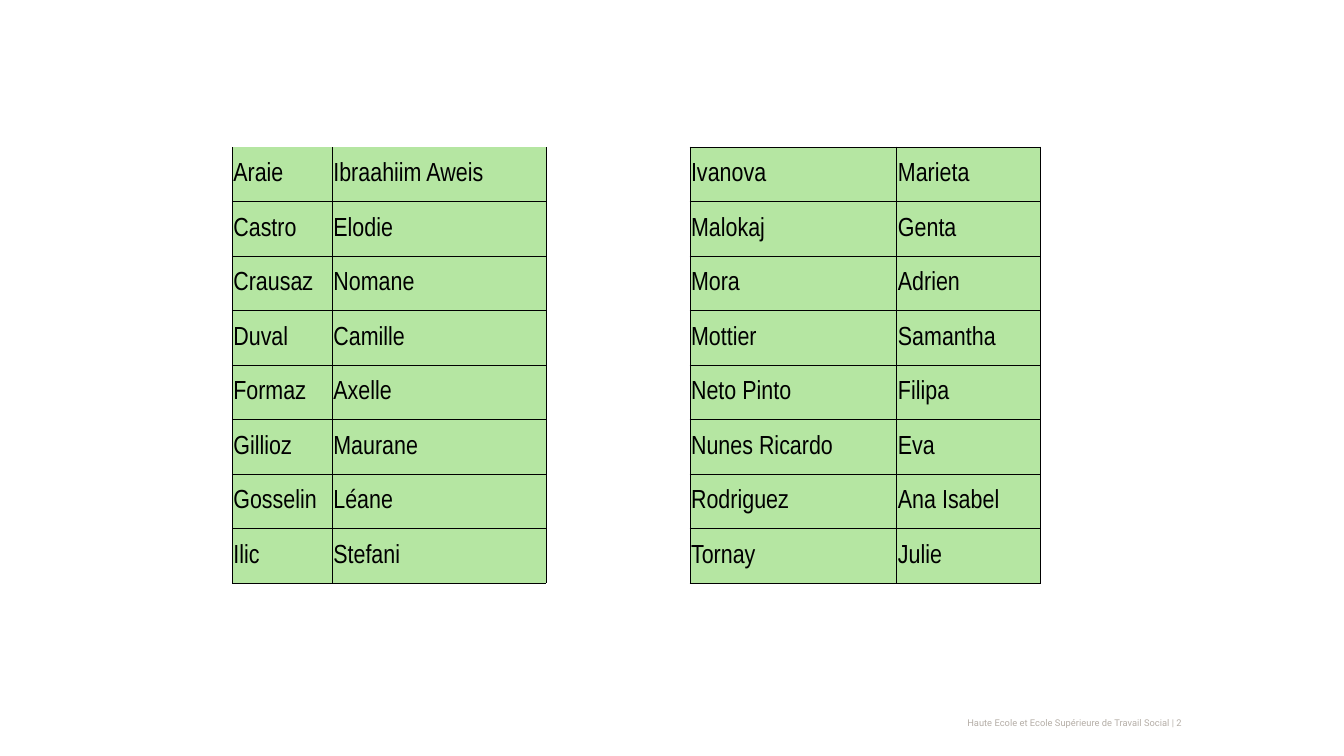
import dataclasses

import lxml.etree
import pptx
import pptx.dml.color
import pptx.enum.text
import pptx.oxml.ns
import pptx.util

Cm = pptx.util.Cm
Pt = pptx.util.Pt
RGB = pptx.dml.color.RGBColor


@dataclasses.dataclass(frozen=True)
class Theme:
    """Colours, fonts and type sizes of the deck."""

    name_fill: RGB = RGB.from_string("B5E6A2")
    ink: RGB = RGB.from_string("000000")
    muted: RGB = RGB.from_string("B5AEA7")
    name_font: str = "Arial Narrow"
    footer_font: str = "Roboto"
    name_size: int = Pt(14)
    footer_size: int = Pt(5)
    rule_width: int = Pt(0.5)


THEME = Theme()
NAME_FONT = {"name": THEME.name_font, "size": THEME.name_size, "color": THEME.ink}
FOOTER_FONT = {"name": THEME.footer_font, "size": THEME.footer_size, "color": THEME.muted}
MIDDLE = pptx.enum.text.MSO_ANCHOR.MIDDLE
NAME_CELL = {
    "margin_left": Cm(0.02),
    "margin_right": Cm(0.02),
    "margin_top": Cm(0.02),
    "margin_bottom": 0,
    "vertical_anchor": MIDDLE,
}
FOOTER_FRAME = {
    "margin_left": 0,
    "margin_right": 0,
    "margin_top": 0,
    "margin_bottom": 0,
    "vertical_anchor": MIDDLE,
    "word_wrap": True,
}
FOOTER_PARAGRAPH = {"alignment": pptx.enum.text.PP_ALIGN.RIGHT, "line_spacing": Pt(7)}

COLUMN_WIDTHS = [1.89, 4.04, 2.72, 3.91, 2.72]
GAP_COLUMN = 2
STUDENTS = [
    ("Araie", "Ibraahiim Aweis", "", "Ivanova", "Marieta"),
    ("Castro", "Elodie", "", "Malokaj", "Genta"),
    ("Crausaz", "Nomane", "", "Mora", "Adrien"),
    ("Duval", "Camille", "", "Mottier", "Samantha"),
    ("Formaz", "Axelle", "", "Neto Pinto", "Filipa"),
    ("Gillioz", "Maurane", "", "Nunes Ricardo", "Eva"),
    ("Gosselin", "Léane", "", "Rodriguez", "Ana Isabel"),
    ("Ilic", "Stefani", "", "Tornay", "Julie"),
]


def apply_format(target, values):
    """Set each attribute of the target from a dict of format values."""
    for attribute, value in values.items():
        if attribute == "color":
            target.color.rgb = value
        else:
            setattr(target, attribute, value)


def draw_borders(cell, sides):
    """Rule the given sides of a cell and clear the others."""
    qn = pptx.oxml.ns.qn
    properties = cell._tc.get_or_add_tcPr()
    for side in "LRTB":
        border = lxml.etree.SubElement(properties, qn(f"a:ln{side}"), w=str(THEME.rule_width))
        if side in sides:
            paint = lxml.etree.SubElement(border, qn("a:solidFill"))
            lxml.etree.SubElement(paint, qn("a:srgbClr"), val=str(THEME.ink))
        else:
            lxml.etree.SubElement(border, qn("a:noFill"))


def add_student_list(slide, left, top, width, height):
    """Place the two name lists as one table with an open gap column."""
    frame = slide.shapes.add_table(len(STUDENTS), len(COLUMN_WIDTHS), left, top, width, height)
    students = frame.table
    apply_format(students, {"first_row": False, "horz_banding": False})
    for column, share in zip(students.columns, COLUMN_WIDTHS):
        column.width = int(width * share / sum(COLUMN_WIDTHS))
    for row_index, names in enumerate(STUDENTS):
        for column_index, name in enumerate(names):
            cell = students.cell(row_index, column_index)
            apply_format(cell, NAME_CELL)
            if column_index == GAP_COLUMN:
                draw_borders(cell, "LR")
                cell.fill.background()
                continue
            open_top = row_index == 0 and column_index < GAP_COLUMN
            draw_borders(cell, "LRB" if open_top else "LRTB")
            cell.fill.solid()
            cell.fill.fore_color.rgb = THEME.name_fill
            cell.text = name
            apply_format(cell.text_frame.paragraphs[0].runs[0].font, NAME_FONT)


def add_footer(slide, left, top, width, height):
    """Place the school name and page number in the given box."""
    footer = slide.shapes.add_textbox(left, top, width, height).text_frame
    apply_format(footer, FOOTER_FRAME)
    school = footer.paragraphs[0]
    apply_format(school, FOOTER_PARAGRAPH)
    school_name = school.add_run()
    school_name.text = "Haute Ecole et Ecole Supérieure de Travail Social | 2"
    apply_format(school_name.font, FOOTER_FONT)


def main():
    """Build the class list slide and save it."""
    deck = pptx.Presentation()
    apply_format(deck, {"slide_width": Cm(25.4), "slide_height": Cm(14.29)})
    slide = deck.slides.add_slide(deck.slide_layouts[6])
    add_footer(slide, Cm(16.08), Cm(13.52), Cm(6.27), Cm(0.25))
    add_student_list(slide, Cm(4.39), Cm(2.78), Cm(15.28), Cm(8.24))
    deck.save("out.pptx")


if __name__ == "__main__":
    main()
